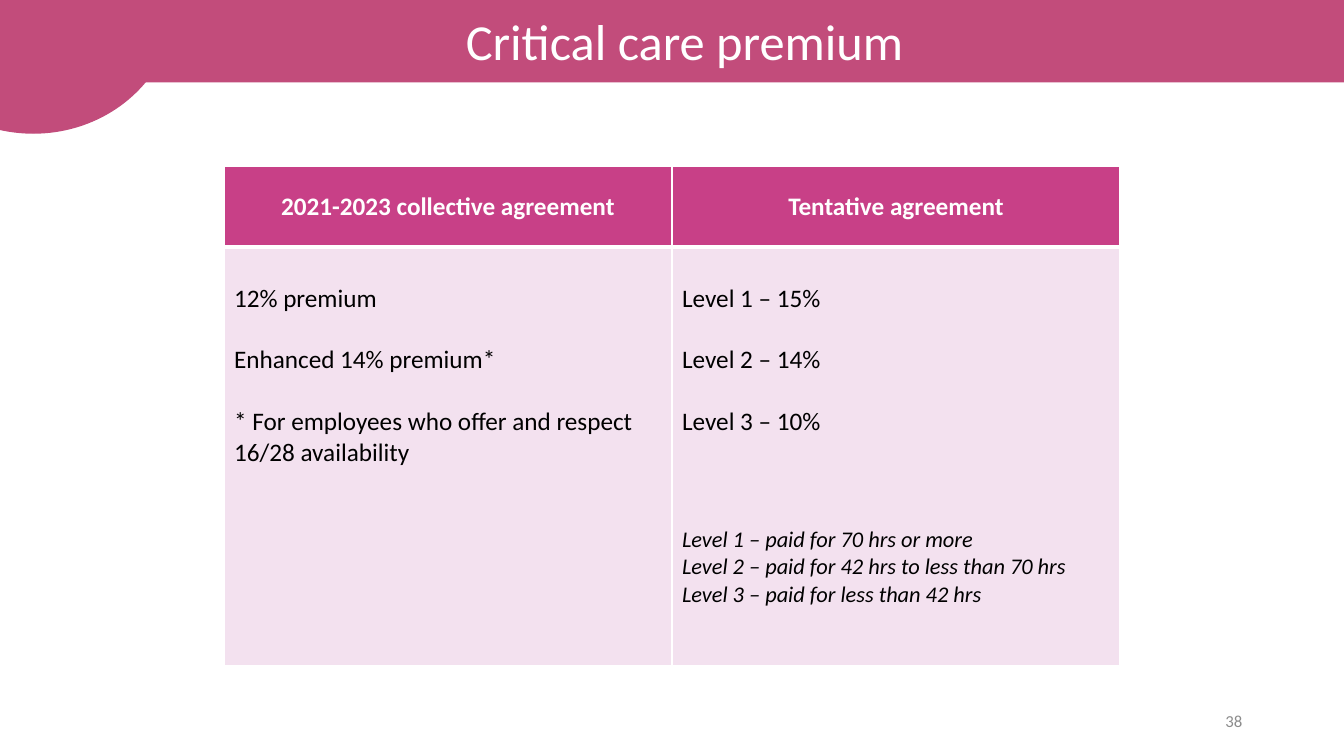
from lxml.etree import SubElement
from pptx import Presentation
from pptx.dml.color import RGBColor
from pptx.enum.shapes import MSO_SHAPE as Shape
from pptx.enum.text import MSO_ANCHOR as Anchor, PP_ALIGN as Align
from pptx.oxml.ns import qn
from pptx.util import Inches, Pt

WIDTH, HEIGHT = 13.33, 7.5
BANNER, HEADER, BODY, WHITE = "C24C7B", "C84087", "F3E1EF", "FFFFFF"
HEADINGS = ["2021-2023 collective agreement", "Tentative agreement"]
PREMIUMS = [
    ["12% premium", "Enhanced 14% premium*",
     "* For employees who offer and respect 16/28 availability"],
    ["Level 1 – 15%", "Level 2 – 14%", "Level 3 – 10%"],
]
LEVEL_NOTES = [
    "Level 1 – paid for 70 hrs or more",
    "Level 2 – paid for 42 hrs to less than 70 hrs",
    "Level 3 – paid for less than 42 hrs",
]


def paint(target, color):
    """Give a fill a solid hex colour."""
    target.solid()
    target.fore_color.rgb = RGBColor.from_string(color)


def write(frame, text, size=18, color="000000", bold=False, italic=False,
          align=Align.LEFT, before=0):
    """Add a formatted paragraph, using the frame's first one if it is empty."""
    para = frame.paragraphs[0] if not frame.text else frame.add_paragraph()
    para.alignment, para.space_before = align, Pt(before)
    span = para.add_run()
    span.text = text
    span.font.name, span.font.size = "Calibri", Pt(size)
    span.font.bold, span.font.italic = bold, italic
    paint(span.font.fill, color)


def add_solid(page, kind, box):
    """Add a preset shape in the banner colour."""
    shape = page.shapes.add_shape(kind, *map(Inches, box))
    shape.shadow.inherit = False
    paint(shape.fill, BANNER)
    paint(shape.line.fill, BANNER)
    shape.line.width = Pt(1)
    return shape


def add_banner(page, box):
    """Draw the title bar with the round corner at its left end."""
    left, top, width, height = box
    bar = add_solid(page, Shape.ROUNDED_RECTANGLE, box)
    bar.text_frame.vertical_anchor = Anchor.MIDDLE
    write(bar.text_frame, "Critical care premium", size=36, color=WHITE,
          align=Align.CENTER)
    add_solid(page, Shape.OVAL, (left - 1.08, top - 1.33, 2.82, 2.65))


def add_borders(cell, bottom):
    """Put white borders round a cell, with its own bottom width in points."""
    properties = cell._tc.get_or_add_tcPr()
    for side, points in zip("LRTB", (1, 1, 1, bottom)):
        line = SubElement(properties, qn(f"a:ln{side}"), w=str(Pt(points)))
        solid = SubElement(line, qn("a:solidFill"))
        SubElement(solid, qn("a:srgbClr"), val=WHITE)


def add_comparison(page, box):
    """Compare the premiums of both agreements in a two-column table."""
    left, top, width, height = box
    table = page.shapes.add_table(2, 2, *map(Inches, box)).table
    table.horz_banding = False
    header_height = 0.8
    table.rows[0].height = Inches(header_height)
    table.rows[1].height = Inches(height - header_height)
    for column, (heading, premiums) in enumerate(zip(HEADINGS, PREMIUMS)):
        table.columns[column].width = Inches(width / 2)
        head, body = table.cell(0, column), table.cell(1, column)
        for cell, color, bottom in ((head, HEADER, 3), (body, BODY, 1)):
            add_borders(cell, bottom)
            paint(cell.fill, color)
        head.vertical_anchor = Anchor.MIDDLE
        write(head.text_frame, heading, color=WHITE, bold=True,
              align=Align.CENTER)
        body.margin_top = Inches(0.36)
        for index, premium in enumerate(premiums):
            write(body.text_frame, premium, before=22 if index else 0)
    for index, note in enumerate(LEVEL_NOTES):
        write(table.cell(1, 1).text_frame, note, size=16, italic=True,
              before=0 if index else 63.5)


def add_page_number(page, box):
    """Write the page number at the right of its box."""
    frame = page.shapes.add_textbox(*map(Inches, box)).text_frame
    frame.word_wrap = True
    frame.vertical_anchor = Anchor.MIDDLE
    write(frame, "38", size=12, color="8C8C8C", align=Align.RIGHT)


def main():
    """Build the slide and save the deck."""
    deck = Presentation()
    deck.slide_width, deck.slide_height = Inches(WIDTH), Inches(HEIGHT)
    page = deck.slides.add_slide(deck.slide_layouts[6])
    add_banner(page, (0, 0, WIDTH + 0.25, 0.81))
    add_comparison(page, (WIDTH / 6, HEIGHT * 0.22, WIDTH * 2 / 3, HEIGHT * 0.66))
    add_page_number(page, (9.42, 6.95, 3, 0.4))
    deck.save("out.pptx")


if __name__ == "__main__":
    main()
